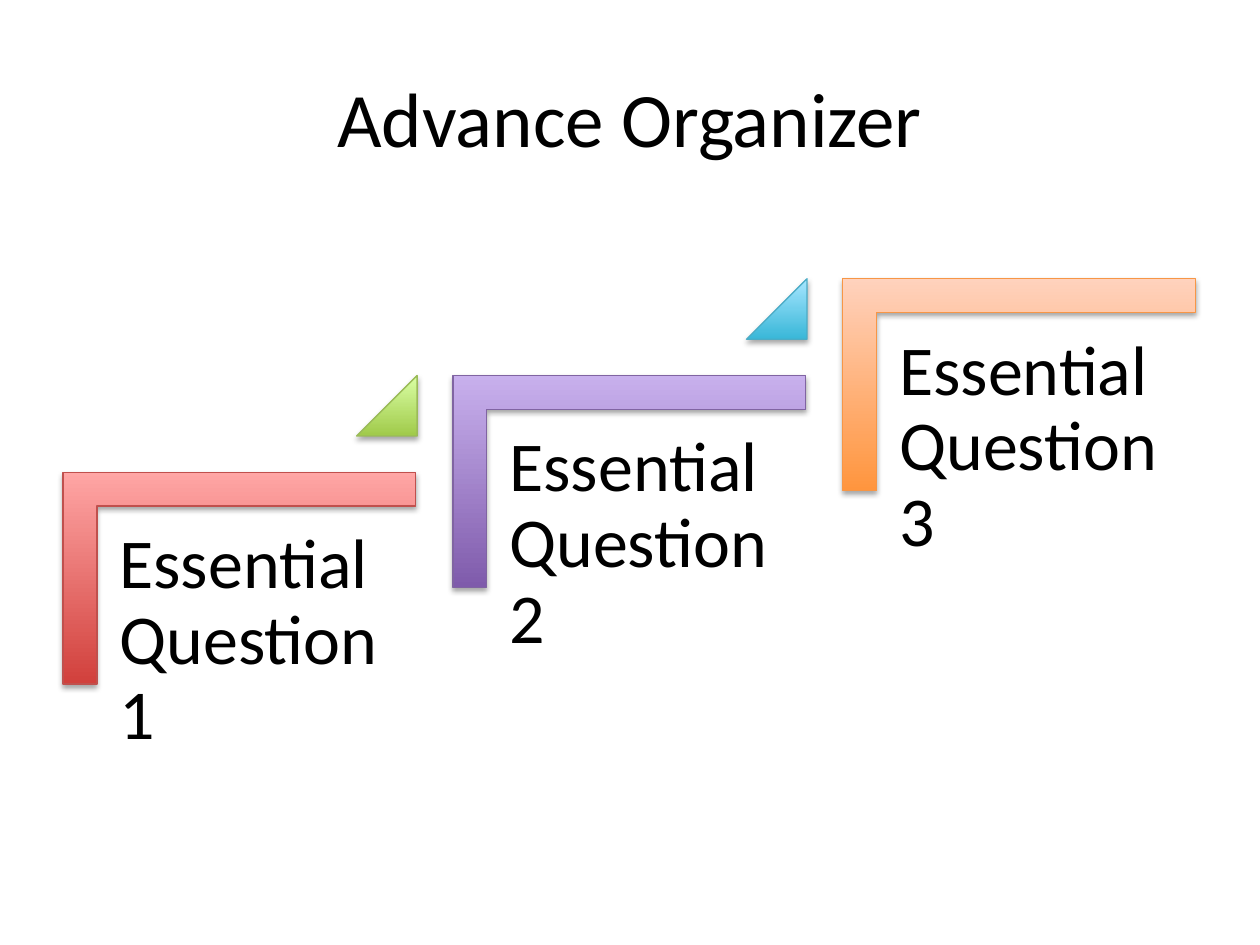
from lxml import etree
from pptx import Presentation
from pptx.dml.color import RGBColor
from pptx.enum.shapes import MSO_SHAPE as Shape
from pptx.enum.text import MSO_ANCHOR as Anchor, PP_ALIGN as Align
from pptx.util import Cm, Pt

SHADOW = """<a:effectLst xmlns:a="http://schemas.openxmlformats.org/drawingml/2006/main">
<a:outerShdw blurRad="40000" dist="23000" dir="5400000" rotWithShape="0">
<a:srgbClr val="000000"><a:alpha val="35000"/></a:srgbClr></a:outerShdw></a:effectLst>"""


def add_text(text, left, top, width, height, size, align=Align.LEFT,
             anchor=Anchor.TOP, margin=0.25, spacing=1.0):
    box = slide.shapes.add_textbox(Cm(left), Cm(top), Cm(width), Cm(height))
    frame = box.text_frame
    frame.word_wrap = True
    frame.vertical_anchor = anchor
    frame.margin_left = frame.margin_right = Cm(margin)
    frame.margin_top = frame.margin_bottom = Cm(margin)
    para = frame.paragraphs[0]
    para.alignment = align
    para.line_spacing = spacing
    span = para.add_run()
    span.text = text
    span.font.name = "Calibri"
    span.font.size = Pt(size)
    span.font.color.rgb = RGBColor.from_string("000000")


def add_glossy(kind, left, top, width, height, colors, adjustments, rotation=0):
    """Add a shape with a vertical gradient; colors are bottom, top and line."""
    shape = slide.shapes.add_shape(kind, Cm(left), Cm(top), Cm(width), Cm(height))
    shape.rotation = rotation
    for index, value in enumerate(adjustments):
        shape.adjustments[index] = value
    bottom, upper, line = [RGBColor.from_string(color) for color in colors]
    shape.fill.gradient()
    shape.fill.gradient_angle = 90
    for stop, color in zip(shape.fill.gradient_stops, (bottom, upper)):
        stop.color.rgb = color
    # Keep the gradient upright when the shape is turned
    shape.element.spPr.find("{*}gradFill").set("rotWithShape", "0")
    shape.line.color.rgb = line
    shape.line.width = Pt(0.75)
    shape.element.spPr.append(etree.fromstring(SHADOW))


deck = Presentation()
deck.slide_width, deck.slide_height = Cm(25.4), Cm(19.05)
slide = deck.slides.add_slide(deck.slide_layouts[6])

add_text("Advance Organizer", 1.27, 0.76, 22.86, 3.18, size=44,
         align=Align.CENTER, anchor=Anchor.MIDDLE)

step_right, step_up = 7.86, 1.95
corner_colors = [("D1403C", "FFA6A5", "C0504D"),
                 ("7F5BAB", "C8B0ED", "8064A2"),
                 ("FF953E", "FFD2BD", "F79646")]
triangle_colors = [("A0CA4A", "DAFFA5", "9BBB59"),
                   ("39B7D8", "A7E6FF", "4BACC6")]

for step, colors in enumerate(corner_colors):
    right, up = step * step_right, step * step_up
    add_glossy(Shape.CORNER, 2.69 + right, 8.1 - up, 4.27, 7.11, colors,
               adjustments=(0.16, 0.16), rotation=90)
    add_text(f"Essential Question {step + 1}", 1.98 + right, 10.22 - up, 6.43, 5.64,
             size=40, margin=0.43, spacing=0.9)
    if step < len(triangle_colors):
        add_glossy(Shape.ISOSCELES_TRIANGLE, 7.19 + right, 7.57 - up, 1.22, 1.22,
                   triangle_colors[step], adjustments=(1,))

deck.save("out.pptx")
